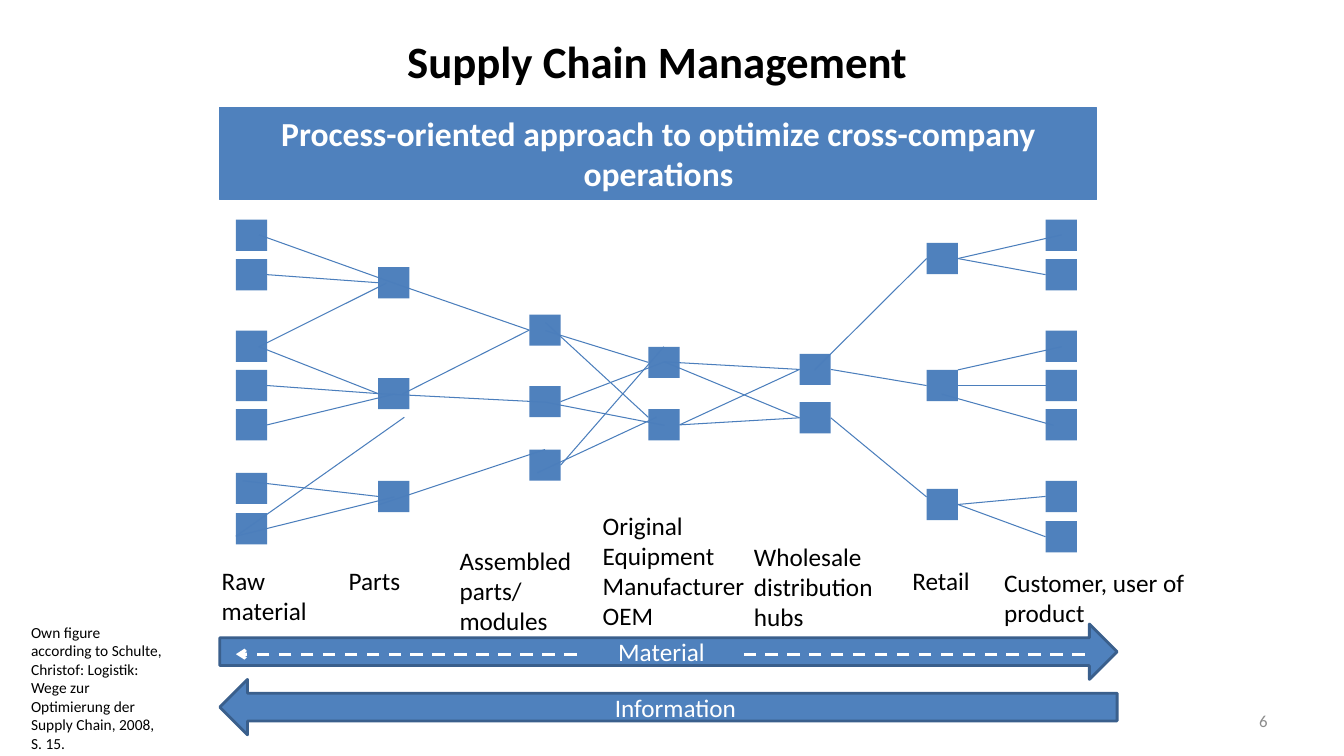
from lxml import etree
from pptx import Presentation
from pptx.dml.color import RGBColor
from pptx.enum.dml import MSO_LINE
from pptx.enum.shapes import MSO_CONNECTOR, MSO_SHAPE
from pptx.enum.text import MSO_ANCHOR, MSO_AUTO_SIZE, PP_ALIGN
from pptx.oxml.ns import qn
from pptx.util import Inches, Pt

BLUE = RGBColor(0x4F, 0x81, 0xBD)
LINK_BLUE = RGBColor(0x4B, 0x7E, 0xBC)
DARK_BLUE = RGBColor(0x3A, 0x5F, 0x8C)
GREY = RGBColor(0x8C, 0x8C, 0x8C)
WHITE = RGBColor(0xFF, 0xFF, 0xFF)
BLACK = RGBColor(0, 0, 0)
LEFT, CENTER, RIGHT = PP_ALIGN.LEFT, PP_ALIGN.CENTER, PP_ALIGN.RIGHT
TOP, MIDDLE = MSO_ANCHOR.TOP, MSO_ANCHOR.MIDDLE
GROW = MSO_AUTO_SIZE.SHAPE_TO_FIT_TEXT
RECTANGLE, STRAIGHT = MSO_SHAPE.RECTANGLE, MSO_CONNECTOR.STRAIGHT

SQUARE = 0.31
JOIN_TOLERANCE = 0.02


def write(shape, text, size, color=BLACK, align=LEFT, anchor=TOP, bold=False):
    frame = shape.text_frame
    frame.text = text
    frame.word_wrap = True
    frame.vertical_anchor = anchor
    para = frame.paragraphs[0]
    para.alignment = align
    font = para.runs[0].font
    font.name, font.size, font.bold = "Calibri", Pt(size), bold
    font.color.rgb = color


def add_line(start, end, color, width):
    line = page.shapes.add_connector(STRAIGHT, *map(Inches, start + end))
    line.line.color.rgb = color
    line.line.width = Pt(width)
    etree.SubElement(line._element.spPr, qn("a:effectLst"))
    return line


deck = Presentation()
deck.slide_width, deck.slide_height = Inches(13.33), Inches(7.5)
page = deck.slides.add_slide(deck.slide_layouts[5])

title = page.shapes.title
title.left, title.top = Inches(2.02), Inches(-0.02)
title.width, title.height = Inches(9), Inches(1.25)
write(title, "Supply Chain Management", 32, align=CENTER, anchor=MIDDLE, bold=True)

page_number = page.shapes.add_textbox(Inches(9.56), Inches(6.95), Inches(3.11), Inches(0.4))
write(page_number, "6", 12, GREY, RIGHT, MIDDLE)

banner = page.shapes.add_shape(RECTANGLE, Inches(2.18), Inches(1.07), Inches(8.7), Inches(0.91))
banner.shadow.inherit = False
banner.fill.solid()
banner.fill.fore_color.rgb = BLUE
banner.line.color.rgb = BLUE
banner.line.width = Pt(0.75)
write(banner, "Process-oriented approach to optimize cross-company operations",
      24, WHITE, CENTER, bold=True)
banner.text_frame.auto_size = GROW

# Flows below the chain
for text, kind, top in [("Material", MSO_SHAPE.RIGHT_ARROW, 6.19),
                        ("Information", MSO_SHAPE.LEFT_ARROW, 6.74)]:
    flow = page.shapes.add_shape(kind, Inches(2.18), Inches(top), Inches(8.9), Inches(0.55))
    flow.shadow.inherit = False
    flow.fill.solid()
    flow.fill.fore_color.rgb = BLUE
    flow.line.color.rgb = DARK_BLUE
    flow.line.width = Pt(2)
    write(flow, text, 18, WHITE, CENTER, MIDDLE)

for start_x, end_x, has_head in [(5.72, 2.34, True), (10.76, 7.38, False)]:
    dashes = add_line((start_x, 6.49), (end_x, 6.49), WHITE, 2.25)
    dashes.line.dash_style = MSO_LINE.DASH
    if has_head:
        etree.SubElement(dashes.line._get_or_add_ln(), qn("a:tailEnd"), type="arrow")

# Stage captions and the credit of the figure
captions = [
    ("Raw material", 2.1, 5.56, 1.42, 0.71, 18),
    ("Parts", 3.36, 5.56, 1.1, 0.4, 18),
    ("Assembled parts/ modules", 4.46, 5.36, 1.73, 1.01, 18),
    ("Original Equipment Manufacturer OEM", 5.88, 5.01, 1.73, 1.31, 18),
    ("Wholesale distribution hubs", 7.38, 5.32, 1.73, 1.01, 18),
    ("Retail", 8.95, 5.56, 1.02, 0.4, 18),
    ("Customer, user of product", 9.86, 5.58, 2.05, 0.71, 18),
    ("Own figure according to Schulte, Christof: Logistik: Wege zur Optimierung "
     "der Supply Chain, 2008, S. 15.", 0.21, 6.13, 1.5, 1.4, 11),
]
for text, left, top, width, height, size in captions:
    caption = page.shapes.add_textbox(Inches(left), Inches(top), Inches(width), Inches(height))
    write(caption, text, size)
    caption.text_frame.auto_size = GROW

# Companies of each stage: left edge of the column, top edges of its squares
stages = {
    2.34: [2.18, 2.57, 3.28, 3.67, 4.06, 4.69, 5.09],
    3.75: [2.65, 3.75, 4.77],
    5.25: [3.12, 3.83, 4.46],
    6.43: [3.44, 4.06],
    7.93: [3.51, 3.99],
    9.19: [2.41, 3.67, 4.85],
    10.37: [2.18, 2.57, 3.28, 3.67, 4.06, 4.77, 5.17],
}
join_sites = []
for left, tops in stages.items():
    for top in tops:
        company = page.shapes.add_shape(RECTANGLE, Inches(left), Inches(top),
                                        Inches(SQUARE), Inches(SQUARE))
        company.shadow.inherit = False
        company.fill.solid()
        company.fill.fore_color.rgb = BLUE
        company.line.fill.background()
        half = SQUARE / 2
        sides = [(left + half, top), (left, top + half),
                 (left + half, top + SQUARE), (left + SQUARE, top + half)]
        join_sites += [(x, y, company, side) for side, (x, y) in enumerate(sides)]

links = [
    # Customer to retail
    ((10.53, 2.33), (9.5, 2.57)), ((10.37, 2.73), (9.5, 2.57)),
    ((10.37, 5.32), (9.5, 5.01)), ((10.53, 3.44), (9.5, 3.67)),
    ((10.37, 3.83), (9.5, 3.83)), ((10.45, 4.22), (9.34, 3.91)),
    ((10.37, 4.93), (9.5, 5.01)),
    # Retail to wholesale
    ((9.19, 4.93), (8.24, 4.14)), ((9.19, 2.57), (8.08, 3.67)),
    ((9.19, 3.83), (8.24, 3.67)),
    # Wholesale to manufacturer
    ((7.93, 3.67), (6.75, 4.22)), ((7.93, 4.14), (6.59, 3.59)),
    ((7.93, 4.14), (6.75, 4.22)), ((7.93, 3.67), (6.59, 3.59)),
    # Modules to parts
    ((5.25, 3.28), (3.99, 3.91)), ((5.41, 4.46), (3.75, 5.01)),
    ((5.41, 3.99), (3.75, 3.91)), ((5.25, 3.28), (3.91, 2.81)),
    # Manufacturer to modules
    ((6.43, 4.14), (5.41, 3.2)), ((6.51, 4.14), (5.33, 4.69)),
    ((6.59, 3.59), (5.56, 3.99)), ((6.59, 4.22), (5.41, 3.99)),
    ((6.43, 3.59), (5.41, 3.28)), ((6.59, 3.44), (5.56, 4.62)),
    # Parts to raw material
    ((3.83, 2.81), (2.57, 3.44)), ((3.75, 3.91), (2.57, 3.44)),
    ((3.91, 2.81), (2.57, 2.33)), ((3.91, 3.91), (2.65, 4.22)),
    ((3.75, 3.91), (2.65, 3.83)), ((3.75, 2.81), (2.65, 2.73)),
    ((4.01, 4.14), (2.34, 5.32)), ((3.91, 4.93), (2.34, 5.32)),
    ((3.75, 4.93), (2.41, 4.77)),
]
for start, end in links:
    link = add_line(start, end, LINK_BLUE, 0.75)
    for (end_x, end_y), connect in [(start, link.begin_connect), (end, link.end_connect)]:
        for x, y, company, side in join_sites:
            if max(abs(x - end_x), abs(y - end_y)) < JOIN_TOLERANCE:
                connect(company, side)

deck.save("out.pptx")
